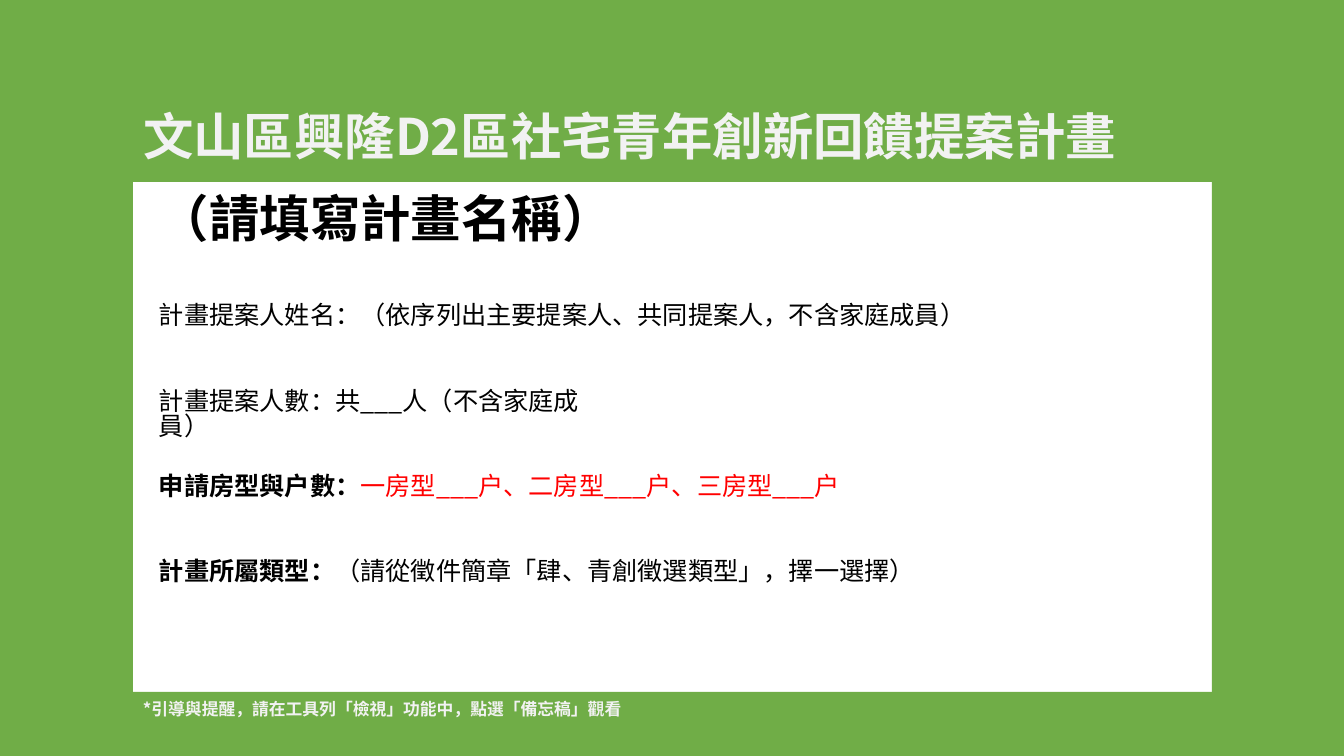
"""Build the cover slide of a social housing youth proposal."""
from pptx import Presentation
from pptx.dml.color import RGBColor
from pptx.enum.shapes import MSO_SHAPE as Shape
from pptx.enum.text import MSO_ANCHOR as Anchor, PP_ALIGN as Align
from pptx.oxml.ns import qn
from lxml.etree import SubElement

PX = 12192000 / 1344
FONT = "Noto Sans CJK TC"
COLORS = {"green": "70AD47", "pale": "F2F2F2", "black": "000000", "red": "FF0000"}


def place(box, left, top, width, height):
    box.left, box.top, box.width, box.height = (
        round(length * PX) for length in (left, top, width, height))


def write(box, size, spans):
    frame = box.text_frame
    frame.word_wrap = True
    frame.vertical_anchor = Anchor.TOP
    para = frame.paragraphs[0]
    para.alignment = Align.LEFT
    para.line_spacing = 0.82
    for text, color, bold in spans:
        span = para.add_run()
        span.text = text
        span.font.size = size * 12700
        span.font.bold = bold
        span.font.name = FONT
        span.font.color.rgb = RGBColor.from_string(COLORS[color])
        SubElement(span.font._element, qn("a:ea"), typeface=FONT)


deck = Presentation()
deck.slide_width, deck.slide_height = round(1344 * PX), round(756 * PX)
page = deck.slides.add_slide(deck.slide_layouts[5])

for band in [(0, 0, 1344, 182), (0, 66, 133, 690), (63, 692, 1281, 64), (1212, 66, 132, 690)]:
    border = page.shapes.add_shape(Shape.RECTANGLE, 0, 0, 0, 0)
    place(border, *band)
    border.shadow.inherit = False
    border.fill.solid()
    border.fill.fore_color.rgb = RGBColor.from_string(COLORS["green"])
    border.line.fill.background()

title = page.shapes.title
page.shapes._spTree.append(title._element)
place(title, 133, 111, 1070, 72)
write(title, 36, [("文山區興隆D2區社宅青年創新回饋提案計畫", "pale", True)])

fields = [
    (149, 193, 1046, 72, 36, [("（請填寫計畫名稱）", "black", True)]),
    (149, 300, 835, 40, 18,
     [("計畫提案人姓名：（依序列出主要提案人、共同提案人，不含家庭成員）", "black", False)]),
    (149, 386, 488, 71, 18, [("計畫提案人數：共___人（不含家庭成員）", "black", False)]),
    (149, 471, 1046, 72, 18,
     [("申請房型與戶數：", "black", True),
      ("一房型___戶、二房型___戶、三房型___戶", "red", False)]),
    (149, 556, 1062, 102, 18,
     [("計畫所屬類型：", "black", True),
      ("（請從徵件簡章「肆、青創徵選類型」，擇一選擇）", "black", False)]),
    (133, 697, 503, 30, 12,
     [("*引導與提醒，請在工具列「檢視」功能中，點選「備忘稿」觀看", "pale", True)]),
]
for left, top, width, height, size, spans in fields:
    box = page.shapes.add_textbox(0, 0, 0, 0)
    place(box, left, top, width, height)
    write(box, size, spans)

deck.save("out.pptx")
